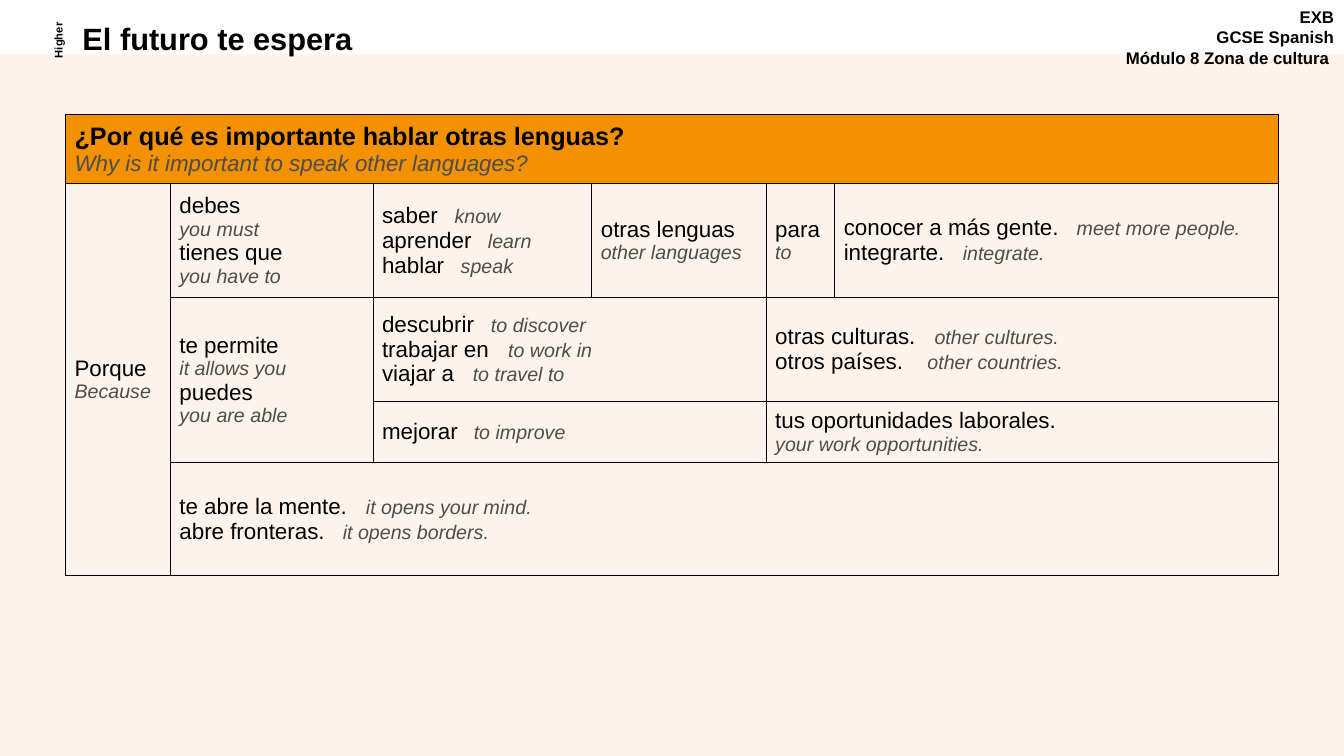
"""Build the Spanish sentence-builder slide on why speaking other languages matters."""
from lxml.etree import SubElement
from pptx import Presentation
from pptx.dml.color import RGBColor
from pptx.enum.shapes import MSO_SHAPE
from pptx.enum.text import MSO_ANCHOR, PP_ALIGN
from pptx.oxml.ns import qn
from pptx.util import Inches, Pt

COLORS = {"black": "000000", "grey": "4D4D4C", "orange": "F39100", "cream": "FDF3ED"}

HEADINGS = [
    (10.99, 0.02, 2.34, 0.77, 0, 12, PP_ALIGN.RIGHT,
     ["EXB", "GCSE Spanish", "Módulo 8 Zona de cultura "]),
    (0.72, 0.19, 8.53, 0.43, 0, 22, PP_ALIGN.LEFT, ["El futuro te espera"]),
    (0.18, 0.29, 0.78, 0.22, 270, 8, PP_ALIGN.CENTER, ["Higher"]),
]

COLUMN_WIDTHS = [1.04, 2.01, 2.17, 1.73, 0.68, 4.4]
ROW_HEIGHTS = [0.68, 1.13, 1.03, 0.61, 1.12]

# row, column, row span, column span, [(Spanish, English, tab stop; 0 puts English below)]
CELLS = [
    (0, 0, 1, 6, [("¿Por qué es importante hablar otras lenguas?",
                   "Why is it important to speak other languages?", 0)]),
    (1, 0, 4, 1, [("Porque", "Because", 0)]),
    (1, 1, 1, 1, [("debes", "you must", 0), ("tienes que", "you have to", 0)]),
    (1, 2, 1, 1, [("saber", "know", 0.72), ("aprender", "learn", 1.05),
                  ("hablar", "speak", 0.78)]),
    (1, 3, 1, 1, [("otras lenguas", "other languages", 0)]),
    (1, 4, 1, 1, [("para", "to", 0)]),
    (1, 5, 1, 1, [("conocer a más gente.", "meet more people.", 2.31),
                  ("integrarte.", "integrate.", 1.18)]),
    (2, 1, 2, 1, [("te permite", "it allows you", 0), ("puedes", "you are able", 0)]),
    (2, 2, 1, 2, [("descubrir", "to discover", 1.08), ("trabajar en", "to work in", 1.25),
                  ("viajar a", "to travel to", 0.9)]),
    (2, 4, 1, 2, [("otras culturas.", "other cultures.", 1.58),
                  ("otros países.", "other countries.", 1.51)]),
    (3, 2, 1, 2, [("mejorar", "to improve", 0.91)]),
    (3, 4, 1, 2, [("tus oportunidades laborales.", "your work opportunities.", 0)]),
    (4, 1, 1, 5, [("te abre la mente.", "it opens your mind.", 1.85),
                  ("abre fronteras.", "it opens borders.", 1.62)]),
]


def write(paragraph, text, size=16, color="black", bold=False, italic=False):
    run = paragraph.add_run()
    run.text = text
    run.font.name = "Arial"
    run.font.size = Pt(size)
    run.font.bold = bold
    run.font.italic = italic
    run.font.color.rgb = RGBColor.from_string(COLORS[color])


def add_borders(cell):
    properties = cell._tc.get_or_add_tcPr()
    for side in ("a:lnL", "a:lnR", "a:lnT", "a:lnB"):
        line = SubElement(properties, qn(side), w=str(Pt(0.75)))
        fill = SubElement(line, qn("a:solidFill"))
        SubElement(fill, qn("a:srgbClr"), val=COLORS["black"])


presentation = Presentation()
presentation.slide_width = Inches(13.33)
presentation.slide_height = Inches(7.5)
slide = presentation.slides.add_slide(presentation.slide_layouts[6])

panel = slide.shapes.add_shape(
    MSO_SHAPE.RECTANGLE, Inches(0), Inches(0.54), Inches(13.33), Inches(6.96))
panel.shadow.inherit = False
panel.fill.solid()
panel.fill.fore_color.rgb = RGBColor.from_string(COLORS["cream"])
panel.line.fill.background()

for left, top, width, height, rotation, size, alignment, lines in HEADINGS:
    heading = slide.shapes.add_textbox(Inches(left), Inches(top), Inches(width), Inches(height))
    heading.rotation = rotation
    frame = heading.text_frame
    frame.word_wrap = True
    for index, text in enumerate(lines):
        paragraph = frame.add_paragraph() if index else frame.paragraphs[0]
        paragraph.alignment = alignment
        if size == 22:
            paragraph.line_spacing = 0.9
        write(paragraph, text, size=size, bold=True)

table = slide.shapes.add_table(
    len(ROW_HEIGHTS), len(COLUMN_WIDTHS), Inches(0.65), Inches(1.14),
    Inches(sum(COLUMN_WIDTHS)), Inches(sum(ROW_HEIGHTS))).table
table.first_row = False
table.horz_banding = False
for column, width in zip(table.columns, COLUMN_WIDTHS):
    column.width = Inches(width)
for row, height in zip(table.rows, ROW_HEIGHTS):
    row.height = Inches(height)

for cell in table.iter_cells():
    add_borders(cell)
    cell.fill.background()
    cell.vertical_anchor = MSO_ANCHOR.MIDDLE
    cell.margin_left = cell.margin_right = Inches(0.09)
    cell.margin_top = cell.margin_bottom = Inches(0.04)

for row, column, row_span, column_span, phrases in CELLS:
    cell = table.cell(row, column)
    if row_span * column_span > 1:
        cell.merge(table.cell(row + row_span - 1, column + column_span - 1))
    is_header = row == 0
    if is_header:
        cell.fill.solid()
        cell.fill.fore_color.rgb = RGBColor.from_string(COLORS["orange"])
    frame = cell.text_frame
    for index, (spanish, english, stop) in enumerate(phrases):
        paragraph = frame.add_paragraph() if index else frame.paragraphs[0]
        write(paragraph, spanish, size=18 if is_header else 16, bold=is_header)
        if stop:
            tabs = SubElement(paragraph._p.get_or_add_pPr(), qn("a:tabLst"))
            SubElement(tabs, qn("a:tab"), pos=str(Inches(stop)), algn="l")
            english = "\t" + english
        else:
            paragraph = frame.add_paragraph()
        write(paragraph, english, size=16 if is_header else 14, color="grey", italic=True)

presentation.save("out.pptx")
